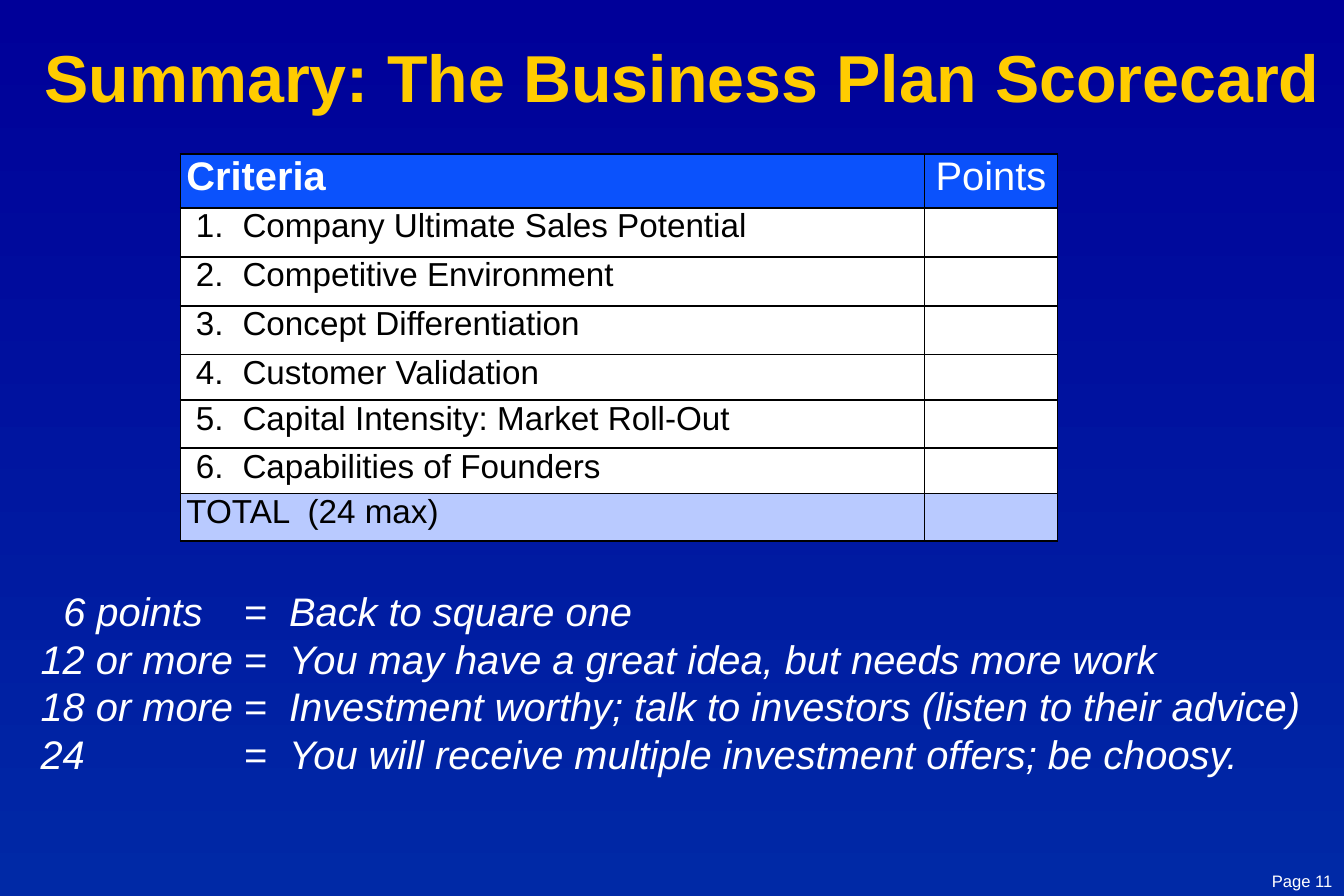
from lxml import etree
from pptx import Presentation
from pptx.dml.color import RGBColor
from pptx.enum.text import MSO_ANCHOR, PP_ALIGN
from pptx.oxml.ns import qn
from pptx.util import Inches, Pt

TITLE = "Summary: The Business Plan Scorecard"
HEADINGS = ["Criteria", "Points"]
CRITERIA = [
    "Company Ultimate Sales Potential",
    "Competitive Environment",
    "Concept Differentiation",
    "Customer Validation",
    "Capital Intensity: Market Roll-Out",
    "Capabilities of Founders",
]
TOTAL = "TOTAL  (24 max)"
VERDICTS = [
    ("\t6 points", "Back to square one"),
    ("12 or more", "You may have a great idea, but needs more work"),
    ("18 or more", "Investment worthy; talk to investors (listen to their advice)"),
    ("24", "You will receive multiple investment offers; be choosy."),
]
PAGE_LABEL = "Page 11"

COLUMN_WIDTHS = [6.23, 1.11]
ROW_HEIGHTS = [0.45, 0.41, 0.41, 0.41, 0.38, 0.4, 0.38, 0.4]
CELL_INSET = 0.05
NUMBER_INSET = 0.13
NUMBER_TABS = [0.39]
VERDICT_TABS = [0.19, 1.7, 2.08]

FONT = "Arial"
WHITE = RGBColor(0xFF, 0xFF, 0xFF)
BLACK = RGBColor(0, 0, 0)
GOLD = RGBColor(0xFF, 0xCC, 0x00)
HEADER_BLUE = RGBColor(0x0B, 0x52, 0xFC)
TOTAL_BLUE = RGBColor(0xB9, 0xCA, 0xFF)
NAVY = RGBColor(0x00, 0x00, 0x99)
ROYAL = RGBColor(0x00, 0x29, 0xA6)

CENTER, LEFT, RIGHT = PP_ALIGN.CENTER, PP_ALIGN.LEFT, PP_ALIGN.RIGHT
TOP, MIDDLE = MSO_ANCHOR.TOP, MSO_ANCHOR.MIDDLE


def set_tabs(paragraph, stops):
    properties = paragraph._p.get_or_add_pPr()
    tab_list = etree.SubElement(properties, qn("a:tabLst"))
    for stop in stops:
        etree.SubElement(tab_list, qn("a:tab"), pos=str(Inches(stop)), algn="l")


def style(paragraph, size, color, align=LEFT, bold=False, italic=False):
    paragraph.alignment = align
    for span in paragraph.runs:
        span.font.name = FONT
        span.font.size = Pt(size)
        span.font.color.rgb = color
        span.font.bold = bold
        span.font.italic = italic


def add_box(page, left, top, width, height, text, inset=0, anchor=TOP):
    box = page.shapes.add_textbox(*map(Inches, (left, top, width, height)))
    frame = box.text_frame
    frame.word_wrap = True
    frame.vertical_anchor = anchor
    frame.margin_left = frame.margin_right = Inches(inset)
    frame.margin_top = frame.margin_bottom = 0
    frame.text = text
    return frame.paragraphs


def set_cell(cell, text, fill, size, color, inset=CELL_INSET, align=LEFT, bold=False):
    cell.margin_left, cell.margin_right = Inches(inset), Inches(CELL_INSET)
    cell.margin_top = cell.margin_bottom = 0
    cell.text = text
    paragraph = cell.text_frame.paragraphs[0]
    if "\t" in text:
        set_tabs(paragraph, NUMBER_TABS)
    style(paragraph, size, color, align, bold)
    properties = cell._tc.get_or_add_tcPr()
    for side in ("a:lnL", "a:lnR", "a:lnT", "a:lnB"):
        line = etree.SubElement(properties, qn(side), w=str(Pt(1)))
        solid = etree.SubElement(line, qn("a:solidFill"))
        etree.SubElement(solid, qn("a:srgbClr"), val=str(BLACK))
    cell.fill.solid()
    cell.fill.fore_color.rgb = fill


def add_scorecard(page):
    table = page.shapes.add_table(
        len(ROW_HEIGHTS), len(COLUMN_WIDTHS), Inches(1.51), Inches(1.29),
        Inches(sum(COLUMN_WIDTHS)), Inches(sum(ROW_HEIGHTS))).table
    for column, width in zip(table.columns, COLUMN_WIDTHS):
        column.width = Inches(width)
    for row, height in zip(table.rows, ROW_HEIGHTS):
        row.height = Inches(height)

    set_cell(table.cell(0, 0), HEADINGS[0], HEADER_BLUE, 24, WHITE, bold=True)
    set_cell(table.cell(0, 1), HEADINGS[1], HEADER_BLUE, 24, WHITE, align=CENTER)
    rows = [(f"{number}.\t{name}", WHITE, NUMBER_INSET)
            for number, name in enumerate(CRITERIA, 1)]
    rows.append((TOTAL, TOTAL_BLUE, CELL_INSET))
    for index, (text, fill, inset) in enumerate(rows, 1):
        set_cell(table.cell(index, 0), text, fill, 20, BLACK, inset)
        set_cell(table.cell(index, 1), "", fill, 20, BLACK)


def add_verdicts(page):
    lines = [f"{score}\t=\t{verdict}" for score, verdict in VERDICTS]
    for paragraph in add_box(page, 0.34, 4.91, 10.74, 1.62, "\n".join(lines)):
        set_tabs(paragraph, VERDICT_TABS)
        style(paragraph, 24, WHITE, italic=True)


def main():
    deck = Presentation()
    deck.slide_width, deck.slide_height = Inches(11.25), Inches(7.5)
    page = deck.slides.add_slide(deck.slide_layouts[6])
    backdrop = page.background.fill
    backdrop.gradient()
    backdrop.gradient_angle = 270
    for stop, color, position in zip(backdrop.gradient_stops, (NAVY, ROYAL), (0, 1)):
        stop.color.rgb = color
        stop.position = position

    title = add_box(page, 0.25, 0.3, 10.92, 1.25, TITLE)[0]
    style(title, 40, GOLD, CENTER, bold=True)
    add_scorecard(page)
    label = add_box(page, 10.07, 7.24, 1.18, 0.26, PAGE_LABEL, 0.1, MIDDLE)[0]
    style(label, 10, WHITE, RIGHT)
    add_verdicts(page)
    deck.save("out.pptx")


if __name__ == "__main__":
    main()
